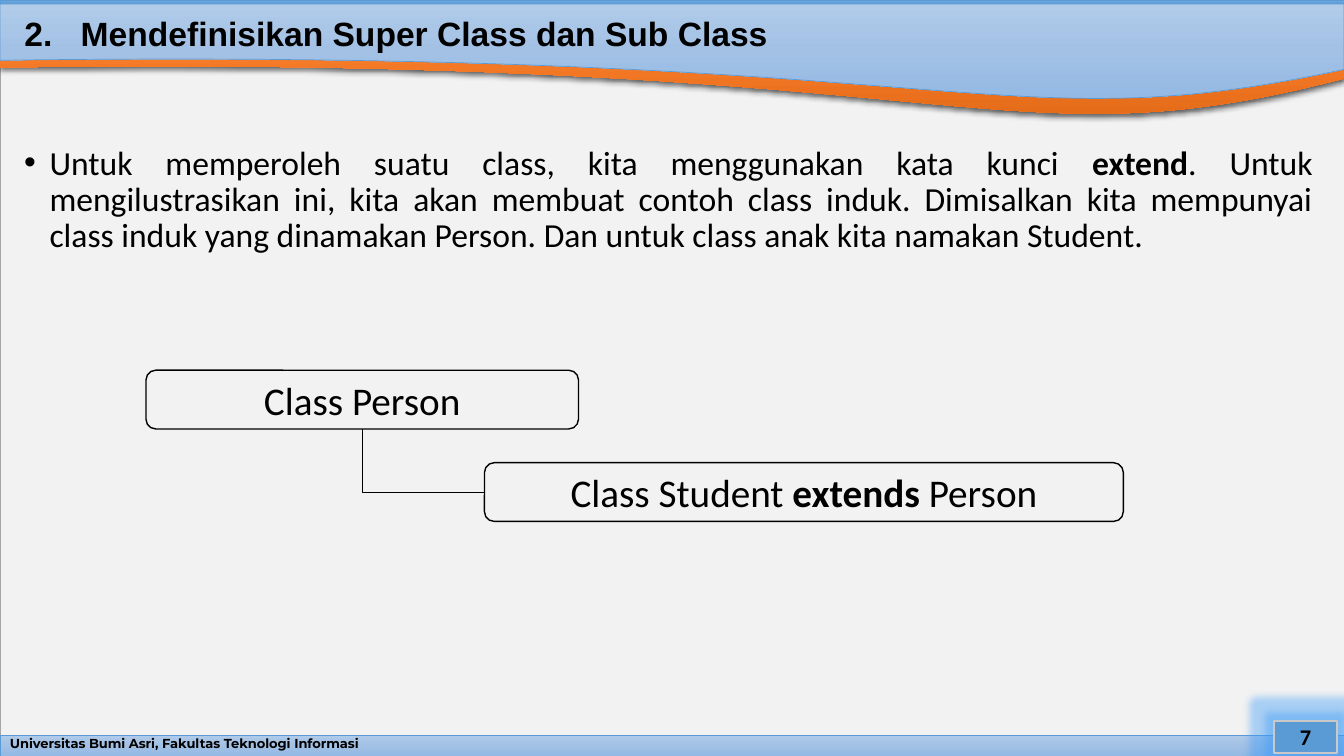
from lxml import etree
from pptx import Presentation
from pptx.dml.color import RGBColor
from pptx.enum.shapes import MSO_CONNECTOR, MSO_SHAPE
from pptx.enum.text import MSO_ANCHOR, MSO_AUTO_SIZE, PP_ALIGN
from pptx.oxml.ns import qn
from pptx.util import Cm, Pt

RECT, ROUNDED = MSO_SHAPE.RECTANGLE, MSO_SHAPE.ROUNDED_RECTANGLE
ELBOW = MSO_CONNECTOR.ELBOW
LEFT, CENTER, JUSTIFY = PP_ALIGN.LEFT, PP_ALIGN.CENTER, PP_ALIGN.JUSTIFY
TOP, MIDDLE = MSO_ANCHOR.TOP, MSO_ANCHOR.MIDDLE

# Content: each text is a list of (words, bold)
TITLE = [("2.\tMendefinisikan Super Class dan Sub Class", True)]
EXPLANATION = [
    ("Untuk memperoleh suatu class, kita menggunakan kata kunci ", False),
    ("extend", True),
    (". Untuk mengilustrasikan ini, kita akan membuat contoh class induk. "
     "Dimisalkan kita mempunyai class induk yang dinamakan Person. "
     "Dan untuk class anak kita namakan Student.", False),
]
PARENT = [("Class Person", False)]
CHILD = [("Class Student ", False), ("extends", True), (" Person", False)]
FOOTER = [("Universitas Bumi Asri, Fakultas Teknologi Informasi", True)]
PAGE_NUMBER = [("7", True)]

COLORS = {"text": "000000", "page": "F2F2F2", "page_edge": "A5A5A5",
          "blue": "5B9BD5", "number_edge": "C9C9C9", "glow": "3C9BF8"}
GRADIENTS = {
    "orange": ("F18C57", "F67B28", "E56C19"),
    "pale_blue": ("B1CBE9", "A3C1E5", "93B9E4"),
    "deep_blue": ("71A6DB", "559BDB", "448ACA"),
}

# Geometry in centimetres
PAGE_W, PAGE_H = 33.87, 19.05
# Wave: top, then the four Bezier points of its lower edge
ORANGE_WAVE = (0.03, [(0, 1.7), (24.79, 1.35), (25.04, 4.27), (PAGE_W, 1.98)])
BLUE_WAVE = (0.1, [(0, 1.52), (24.79, 1.19), (25.04, 3.66), (PAGE_W, 1.75)])
WAVE_STEPS = 60
FOOTER_BOX = (0, 18.52, PAGE_W, 0.53)
MARGIN, TEXT_W = 0.36, 32.97

prs = Presentation()
prs.slide_width, prs.slide_height = Cm(PAGE_W), Cm(PAGE_H)
slide = prs.slides.add_slide(prs.slide_layouts[5])
shapes = slide.shapes


def color(name):
    return RGBColor.from_string(COLORS[name])


def style(shape, fill=None, line=None, width=0.5):
    shape.shadow.inherit = False
    if fill in GRADIENTS:
        shape.fill.gradient()
        shape.fill.gradient_angle = 270
        stops = shape._element.spPr.find(qn("a:gradFill")).find(qn("a:gsLst"))
        for stop in list(stops):
            stops.remove(stop)
        for position, shade in zip((0, 50000, 100000), GRADIENTS[fill]):
            stop = etree.SubElement(stops, qn("a:gs"), pos=str(position))
            etree.SubElement(stop, qn("a:srgbClr"), val=shade)
    elif fill:
        shape.fill.solid()
        shape.fill.fore_color.rgb = color(fill)
    else:
        shape.fill.background()
    if line:
        shape.line.color.rgb = color(line)
        shape.line.width = Pt(width)
    else:
        shape.line.fill.background()
    return shape


def add_box(kind, box, **look):
    return style(shapes.add_shape(kind, *map(Cm, box)), **look)


def add_wave(wave, **look):
    top, (p0, p1, p2, p3) = wave
    edge = []
    for step in range(WAVE_STEPS + 1):
        t = step / WAVE_STEPS
        weights = ((1 - t) ** 3, 3 * t * (1 - t) ** 2, 3 * t * t * (1 - t), t ** 3)
        edge.append(tuple(Cm(sum(w * p[axis] for w, p in zip(weights, (p0, p1, p2, p3))))
                          for axis in (0, 1)))
    builder = shapes.build_freeform(Cm(PAGE_W), Cm(top))
    builder.add_line_segments([(Cm(0), Cm(top))] + edge, close=True)
    return style(builder.convert_to_shape(), **look)


def add_effect(shape, kind, shade, alpha, **settings):
    effects = shape._element.spPr.find(qn("a:effectLst"))
    effect = etree.SubElement(effects, qn("a:" + kind), **settings)
    tint = etree.SubElement(effect, qn("a:srgbClr"), val=COLORS[shade])
    etree.SubElement(tint, qn("a:alpha"), val=str(alpha * 1000))


def write(shape, runs, size, font="Calibri", align=CENTER, anchor=MIDDLE, spacing=None):
    frame = shape.text_frame
    frame.word_wrap = True
    frame.auto_size = MSO_AUTO_SIZE.NONE
    frame.vertical_anchor = anchor
    paragraph = frame.paragraphs[0]
    paragraph.alignment = align
    if spacing:
        paragraph.line_spacing = spacing
    for words, bold in runs:
        run = paragraph.add_run()
        run.text = words
        run.font.name, run.font.size, run.font.bold = font, Pt(size), bold
        run.font.color.rgb = color("text")
    return paragraph


# Page background, banner and footer bar
add_box(RECT, (0, 0.1, PAGE_W, PAGE_H - 0.1), fill="page", line="page_edge")
orange_wave = add_wave(ORANGE_WAVE, fill="orange")
add_effect(orange_wave, "outerShdw", "text", 63, blurRad=str(Pt(4.5)),
           dist=str(Pt(1.5)), dir="5400000", algn="t", rotWithShape="0")
add_box(RECT, FOOTER_BOX, fill="pale_blue", line="blue")
add_box(RECT, (0, 0, PAGE_W, 0.28), fill="deep_blue", line="blue")
add_wave(BLUE_WAVE, fill="pale_blue", line="blue")

# Footer text and page number
footer = shapes.add_textbox(*map(Cm, FOOTER_BOX))
write(footer, FOOTER, 9.3, "Montserrat", LEFT, spacing=0.7)
page_number = add_box(RECT, (32.1, 18.16, 1.6, 0.81),
                      fill="blue", line="number_edge", width=1.5)
add_effect(page_number, "glow", "glow", 40, rad=str(Pt(11)))
write(page_number, PAGE_NUMBER, 16)

# Title, brought in front of the banner
title = shapes.title
title.left, title.top, title.width, title.height = map(Cm, (MARGIN, 0.3, TEXT_W, 1.17))
heading = write(title, TITLE, 24, "Arial", LEFT, spacing=0.9)
tabs = etree.SubElement(heading._p.get_or_add_pPr(), qn("a:tabLst"))
etree.SubElement(tabs, qn("a:tab"), pos=str(Cm(1.42)), algn="l")
shapes._spTree.append(title._element)

# Bulleted explanation
explanation = shapes.add_textbox(*map(Cm, (MARGIN, 3.56, TEXT_W, 4.32)))
bullet = write(explanation, EXPLANATION, 24, align=JUSTIFY, anchor=TOP, spacing=0.9)
bullet.space_before = Pt(10)
bullet_props = bullet._p.get_or_add_pPr()
bullet_props.set("marL", str(Cm(0.64)))
bullet_props.set("indent", str(-Cm(0.64)))
etree.SubElement(bullet_props, qn("a:buFont"), typeface="Arial")
etree.SubElement(bullet_props, qn("a:buChar"), char="•")

# Class hierarchy
parent = add_box(ROUNDED, (3.68, 9.33, 10.9, 1.48), line="text", width=1)
write(parent, PARENT, 28)
child = add_box(ROUNDED, (12.21, 11.66, 16.1, 1.48), line="text", width=1)
write(child, CHILD, 28)

# One-bend link from the parent's bottom to the child's left side
link = shapes.add_connector(ELBOW, 0, 0, 0, 0)
link.begin_connect(parent, 2)
link.end_connect(child, 1)
link.line.color.rgb = color("text")
link.line.width = Pt(0.5)
link_props = link._element.spPr
etree.SubElement(link_props, qn("a:effectLst"))
link_props.find(qn("a:prstGeom")).set("prst", "bentConnector2")
start_x, start_y = parent.left + parent.width // 2, parent.top + parent.height
run_x, drop_y = child.left - start_x, child.top + child.height // 2 - start_y
link.left = start_x + (run_x - drop_y) // 2
link.top = start_y + (drop_y - run_x) // 2
link.width, link.height = drop_y, run_x
turn = link_props.find(qn("a:xfrm"))
turn.set("rot", "16200000")
turn.set("flipH", "1")

prs.save("out.pptx")
